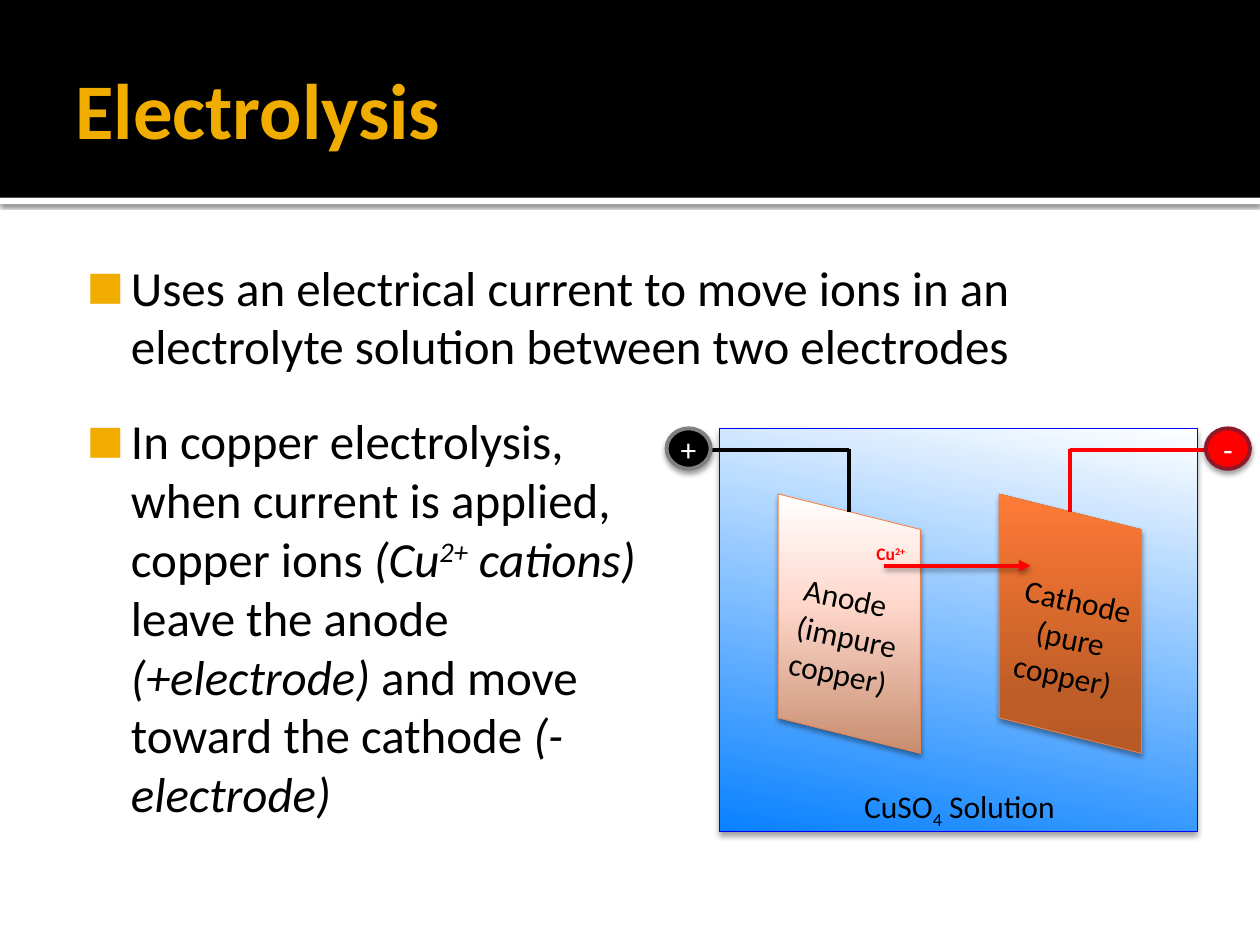
from lxml import etree
from pptx import Presentation, util as u
from pptx.dml.color import RGBColor
from pptx.enum import shapes, text
from pptx.oxml import parse_xml
from pptx.oxml.ns import nsdecls, qn

COLUMNS, ROWS = 100, 75
deck = Presentation()
deck.slide_width, deck.slide_height = u.Inches(10), u.Inches(7.5)
COL, ROW = deck.slide_width / COLUMNS, deck.slide_height / ROWS
FONT = "Calibri"
BLACK, WHITE, RED, GOLD = "000000", "FFFFFF", "FF0000", "F0AD00"
SHAPE = shapes.MSO_SHAPE
CENTER = text.PP_ALIGN.CENTER
SOFT = (38, 3.1, 2)


def colour(value):
    """Turn a hex string into a colour."""
    return RGBColor.from_string(value)


def inside(box, left, top, width, height):
    """Give the slide lengths of a part whose columns and rows count from a box."""
    return [int(n) for n in ((box[0] + left) * COL, (box[1] + top) * ROW,
                             width * COL, height * ROW)]


def child(parent, tag, **attributes):
    """Append a drawing element with attributes."""
    element = etree.SubElement(parent, qn(f"a:{tag}"))
    for name, value in attributes.items():
        element.set(name, str(value))
    return element


def cast_shadow(effects, opacity, blur, distance):
    """Add a downward black shadow to an effect list."""
    shadow = child(effects, "outerShdw", blurRad=u.Pt(blur), dist=u.Pt(distance),
                   dir=90 * 60000, algn="t", rotWithShape=0)
    child(child(shadow, "srgbClr", val=BLACK), "alpha", val=opacity * 1000)


def blend(shape, stops, angle):
    """Fill a shape with a linear gradient."""
    fill = parse_xml(f'<a:gradFill {nsdecls("a")} rotWithShape="1"/>')
    listing = child(fill, "gsLst")
    for share, value in stops:
        child(child(listing, "gs", pos=share * 1000), "srgbClr", val=value)
    child(fill, "lin", ang=angle * 60000, scaled=0)
    shape.fill.background()
    spare = shape._element.spPr.find(qn("a:noFill"))
    spare.getparent().replace(spare, fill)


def add_shape(page, kind, place, fill=None, stops=None, angle=0, line=None,
              weight=1, shadow=None, rotation=0):
    """Draw a preset shape."""
    shape = page.shapes.add_shape(kind, *place)
    shape.rotation = rotation
    if stops:
        blend(shape, stops, angle)
    else:
        shape.fill.solid()
        shape.fill.fore_color.rgb = colour(fill)
    if line:
        shape.line.color.rgb = colour(line)
        shape.line.width = u.Pt(weight)
    else:
        shape.line.fill.background()
    shape.shadow.inherit = False
    if shadow:
        cast_shadow(shape._element.spPr.find(qn("a:effectLst")), *shadow)
    return shape


def add_line(page, box, start, end, color, arrow=False, shadow=None):
    """Draw a straight line between two points of a box."""
    ends = inside(box, *start, 0, 0)[:2] + inside(box, *end, 0, 0)[:2]
    line = page.shapes.add_connector(shapes.MSO_CONNECTOR.STRAIGHT, *ends)
    line.line.color.rgb = colour(color)
    line.line.width = u.Pt(2.25)
    if arrow:
        child(line.line._get_or_add_ln(), "tailEnd", type="triangle")
    effects = child(line._element.spPr, "effectLst")
    if shadow:
        cast_shadow(effects, *shadow)


def write(holder, paragraphs, size=18, color=BLACK, bold=False, align=None,
          anchor=text.MSO_ANCHOR.TOP, insets=(0.1, 0.05, 0.1, 0.05), bullet=None):
    """Set paragraphs of (words, italic, baseline) spans in a shape."""
    frame = holder.text_frame
    frame.word_wrap = True
    frame.vertical_anchor = anchor
    (frame.margin_left, frame.margin_top,
     frame.margin_right, frame.margin_bottom) = map(u.Inches, insets)
    for index, spans in enumerate(paragraphs):
        para = frame.paragraphs[0] if index == 0 else frame.add_paragraph()
        para.alignment = align or text.PP_ALIGN.LEFT
        if bullet:
            settings = para._p.get_or_add_pPr()
            settings.set("marL", str(u.Inches(0.48)))
            settings.set("indent", str(-u.Inches(0.35)))
            child(child(settings, "buClr"), "srgbClr", val=GOLD)
            child(settings, "buSzPct", val=80000)
            child(settings, "buFont", typeface=FONT)
            child(settings, "buChar", char=bullet)
        for words, italic, baseline in spans:
            span = para.add_run()
            span.text = words
            font = span.font
            font.name, font.size, font.bold = FONT, u.Pt(size), bold
            font.italic = italic
            font.color.rgb = colour(color)
            if baseline:
                span._r.get_or_add_rPr().set("baseline", str(baseline * 1000))


def plain(words, baseline=0):
    """Make an upright span."""
    return words, False, baseline


def slanted(words, baseline=0):
    """Make an italic span."""
    return words, True, baseline


def add_text(page, place, paragraphs, rotation=0, **style):
    """Place a text box."""
    holder = page.shapes.add_textbox(*place)
    holder.rotation = rotation
    write(holder, paragraphs, **style)


def header(page, box, title):
    """Draw the title band with its white rule."""
    width, height = box[2:]
    add_shape(page, SHAPE.RECTANGLE, inside(box, 0, height, width, 0.5),
              fill=WHITE, shadow=(60, 2.5, 0.8))
    add_shape(page, SHAPE.RECTANGLE, inside(box, 0, 0, width, height), fill=BLACK)
    add_text(page, inside(box, 5, 1.7, width - 10, height - 2), [[plain(title)]],
             size=45, color=GOLD, bold=True, anchor=text.MSO_ANCHOR.MIDDLE,
             insets=(0.1, 0.05, 0.05, 0.05))


def bullet_text(page, box, spans):
    """Place one bulleted paragraph."""
    add_text(page, inside(box, 0, 0, *box[2:]), [spans], size=28, bullet="■",
             insets=(0.06, 0.1, 0.1, 0.05))


def electrode(page, box, stops, wire, terminal_left, sign, fill, rim):
    """Draw a plate with its wire and terminal."""
    width, height = box[2:]
    middle, wire_top, terminal = width / 2, -3.5, terminal_left + 1.75
    add_shape(page, SHAPE.PARALLELOGRAM,
              inside(box, (width - height) / 2, (height - width) / 2, height, width),
              stops=stops, angle=180, line="E7824C", weight=0.5,
              shadow=SOFT, rotation=90)
    add_line(page, box, (terminal, wire_top), (middle, wire_top), wire)
    add_line(page, box, (middle, wire_top - 0.1), (middle, 1.4), wire)
    knob = add_shape(page, SHAPE.OVAL, inside(box, terminal_left, -5.2, 3.5, 3.2),
                     fill=fill, line=rim, weight=2.25, shadow=SOFT)
    write(knob, [[plain(sign)]], color=WHITE, align=CENTER,
          anchor=text.MSO_ANCHOR.MIDDLE, insets=(0, 0, 0, 0))


def cell(page, box):
    """Draw the electrolysis cell."""
    add_shape(page, SHAPE.RECTANGLE, inside(box, 4.2, 0, 37.9, 32),
              stops=[(0, "0981FF"), (100, WHITE)], angle=281,
              line="0000FF", weight=0.25, shadow=SOFT)
    plates = [
        (8.85, [(1, "C88E71"), (58, "FFD8CC"), (100, WHITE)],
         BLACK, -8.85, "+", BLACK, "808080"),
        (26.4, [(0, "B85A26"), (20, "BC5C27"), (100, "FF7B36")],
         RED, 16.4, "-", RED, "901929"),
    ]
    for left, *look in plates:
        electrode(page, (box[0] + left, box[1] + 5.2, 11.3, 20.6), *look)
    add_text(page, inside(box, 25.6, 11.6, 12.9, 10.1),
             [[plain("Cathode (pure copper)")]], rotation=11.8, align=CENTER)
    add_text(page, inside(box, 9.3, 11.5, 10.4, 10.1),
             [[plain("Anode")], [plain("(impure copper)")]], rotation=11.8)
    add_text(page, inside(box, 14.7, 28, 18.9, 4),
             [[plain("CuSO"), plain("4", -25), plain(" Solution")]])
    add_line(page, box, (17.3, 10.9), (28.9, 10.9), RED, arrow=True, shadow=SOFT)
    add_text(page, inside(box, 13.9, 8.6, 7.8, 2.9),
             [[plain("Cu"), plain("2+", 30)]], size=10, color=RED, bold=True,
             align=CENTER)


def main():
    """Build and save the slide."""
    page = deck.slides.add_slide(deck.slide_layouts[6])
    header(page, (0, 0, COLUMNS, 15.7), "Electrolysis")
    bullet_text(page, (5, 19.4, 90, 14.4), [plain(
        "Uses an electrical current to move ions in an "
        "electrolyte solution between two electrodes")])
    bullet_text(page, (5, 31.6, 48.3, 39.1), [
        plain("In copper electrolysis, when current is applied, copper ions "),
        slanted("(Cu"), slanted("2+", 30), slanted(" cations)"),
        plain(" leave the anode "), slanted("(+electrode)"),
        plain(" and move toward the cathode "), slanted("(-electrode)")])
    cell(page, (52.9, 34, 46.3, 32))
    deck.save("out.pptx")


if __name__ == "__main__":
    main()
